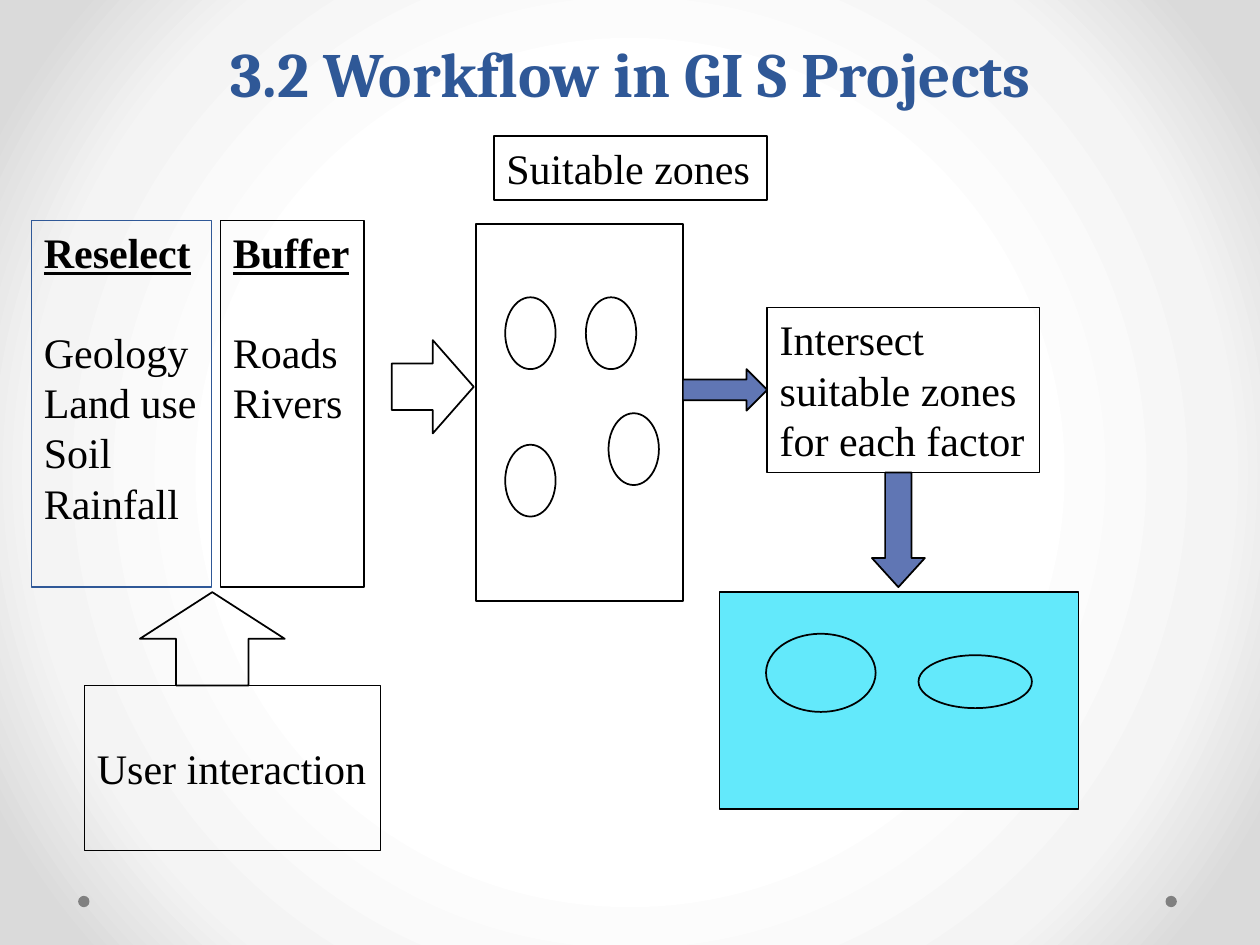
from lxml.etree import SubElement
from pptx import Presentation
from pptx.dml.color import RGBColor
from pptx.enum.shapes import MSO_SHAPE
from pptx.enum.text import MSO_ANCHOR, PP_ALIGN
from pptx.oxml.ns import qn
from pptx.util import Inches, Pt

THEME = {
    "ink": "000000", "navy": "2F5897", "blue": "6076B4", "cyan": "63E9FB",
    "dot": "808080", "backdrop": [(50, "FFFFFF"), (76, "F4F4F4"), (92, "DADADA")],
    "title": 36, "body": 24, "line": 1,
    "title_font": "Cambria", "body_font": "Times New Roman",
}


def add_shape(kind, box, fill=None, line="ink"):
    s = slide.shapes.add_shape(kind, *[Inches(v) for v in box])
    s.shadow.inherit = False
    if fill:
        s.fill.solid()
        s.fill.fore_color.rgb = RGBColor.from_string(THEME[fill])
    else:
        s.fill.background()
    if line:
        s.line.color.rgb = RGBColor.from_string(THEME[line])
        s.line.width = Pt(THEME["line"])
    else:
        s.line.fill.background()
    return s


def write(s, text, size="body", font="body_font", color="ink", align=PP_ALIGN.LEFT,
          anchor=MSO_ANCHOR.TOP, wrap=False, bold=False, heading=False):
    tf = s.text_frame
    tf.word_wrap = wrap
    tf.vertical_anchor = anchor
    for i, line in enumerate(text.split("\n")):
        p = tf.paragraphs[0] if i == 0 else tf.add_paragraph()
        p.alignment = align
        r = p.add_run()
        r.text = line
        r.font.size = Pt(THEME[size])
        r.font.name = THEME[font]
        r.font.color.rgb = RGBColor.from_string(THEME[color])
        is_heading = heading and i == 0
        r.font.bold = bold or is_heading
        r.font.underline = is_heading
        if is_heading:
            p.space_after = Pt(28)


prs = Presentation()
prs.slide_width, prs.slide_height = Inches(10), Inches(7.5)
slide = prs.slides.add_slide(prs.slide_layouts[6])

slide.background.fill.solid()
bg = slide.background.fill._xPr
bg.remove(bg.find(qn("a:solidFill")))
grad = SubElement(bg, qn("a:gradFill"), rotWithShape="1")
bg.insert(0, grad)
stops = SubElement(grad, qn("a:gsLst"))
for pos, color in THEME["backdrop"]:
    stop = SubElement(stops, qn("a:gs"), pos=str(pos * 1000))
    SubElement(stop, qn("a:srgbClr"), val=color)
circle = SubElement(grad, qn("a:path"), {"path": "circle"})
SubElement(circle, qn("a:fillToRect"), {side: "50000" for side in "ltrb"})

for x in (9.25, 0.62):
    add_shape(MSO_SHAPE.OVAL, (x, 7.11, 0.09, 0.09), fill="dot", line=None)

title = slide.shapes.add_textbox(Inches(0.67), Inches(0.17), Inches(8.67), Inches(0.75))
write(title, "3.2 Workflow in GI S Projects", size="title", font="title_font", color="navy",
      align=PP_ALIGN.CENTER, anchor=MSO_ANCHOR.BOTTOM, wrap=True, bold=True)

add_shape(MSO_SHAPE.RECTANGLE, (3.78, 1.78, 1.64, 2.99))
for x, y in ((4.01, 2.36), (4.65, 2.36), (4.83, 3.28), (4.01, 3.53)):
    add_shape(MSO_SHAPE.OVAL, (x, y, 0.4, 0.57))

user = add_shape(MSO_SHAPE.RECTANGLE, (0.67, 5.44, 2.35, 1.31))
write(user, "User interaction", anchor=MSO_ANCHOR.MIDDLE, wrap=True)

reselect = add_shape(MSO_SHAPE.RECTANGLE, (0.25, 1.75, 1.43, 2.91), line="navy")
write(reselect, "Reselect\nGeology\nLand use\nSoil\nRainfall", heading=True)

buffer = add_shape(MSO_SHAPE.RECTANGLE, (1.75, 1.75, 1.14, 2.91))
write(buffer, "Buffer\nRoads\nRivers", heading=True)

intersect = add_shape(MSO_SHAPE.RECTANGLE, (6.09, 2.44, 2.16, 1.31))
write(intersect, "Intersect\nsuitable zones\nfor each factor")

suitable = add_shape(MSO_SHAPE.RECTANGLE, (3.92, 1.08, 2.17, 0.51))
write(suitable, "Suitable zones", wrap=True)

add_shape(MSO_SHAPE.RECTANGLE, (5.71, 4.7, 2.85, 1.72), fill="cyan")
for box in ((6.08, 5.03, 0.87, 0.62), (7.29, 5.2, 0.9, 0.42)):
    add_shape(MSO_SHAPE.OVAL, box, fill="cyan")

add_shape(MSO_SHAPE.RIGHT_ARROW, (3.11, 2.7, 0.65, 0.74))
add_shape(MSO_SHAPE.UP_ARROW, (1.11, 4.7, 1.15, 0.74))
add_shape(MSO_SHAPE.RIGHT_ARROW, (5.42, 2.93, 0.67, 0.33), fill="blue")
down = add_shape(MSO_SHAPE.DOWN_ARROW, (6.92, 3.75, 0.42, 0.91), fill="blue")
down.adjustments[1] = 0.55

prs.save("out.pptx")
